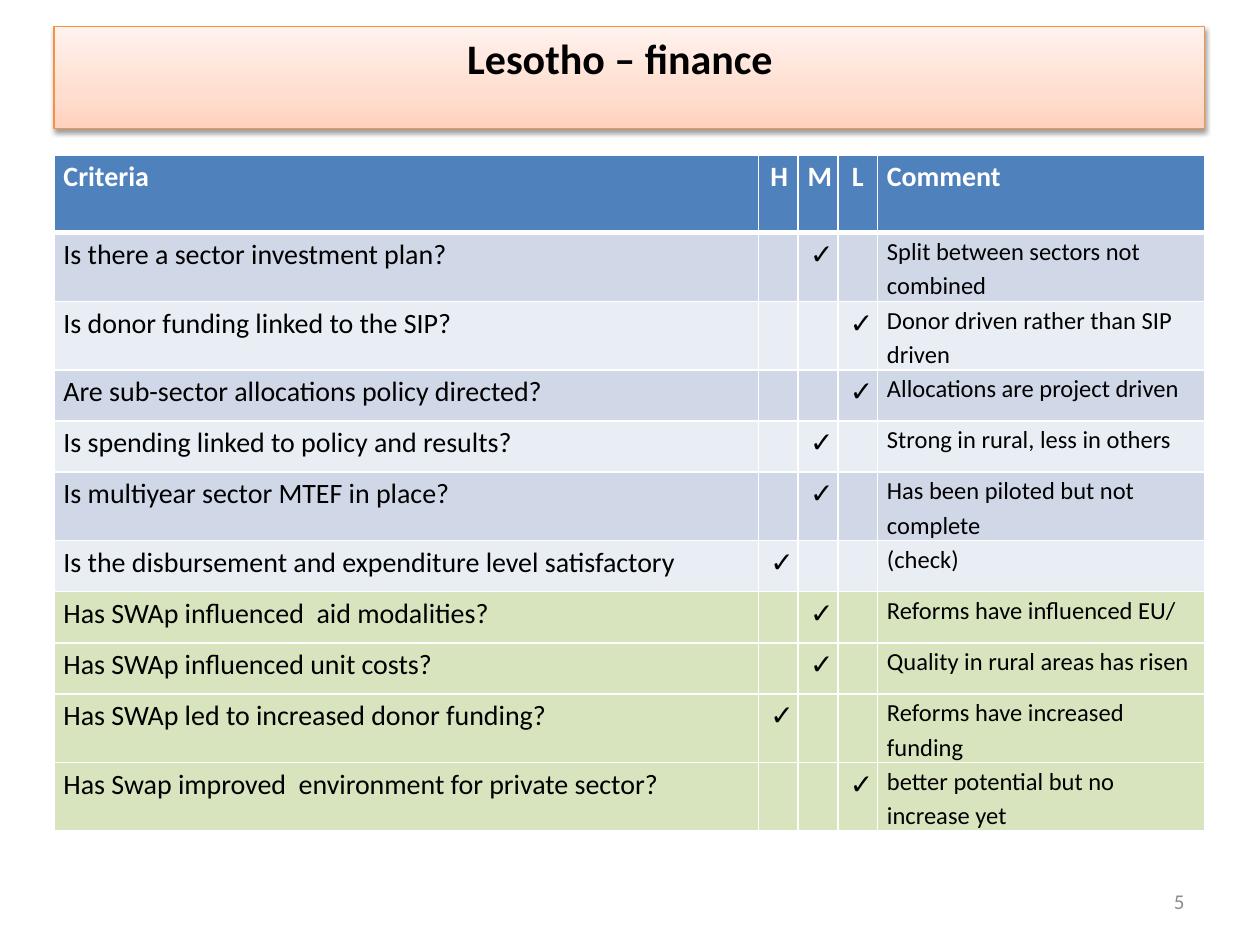
from lxml.etree import SubElement
from pptx import Presentation
from pptx.dml.color import RGBColor
from pptx.enum.shapes import MSO_SHAPE
from pptx.enum.text import MSO_ANCHOR, PP_ALIGN
from pptx.oxml import parse_xml
from pptx.oxml.ns import nsdecls, qn
from pptx.util import Cm, Pt

TITLE = "Lesotho – finance  "
PAGE = "5"
HEADER = ["Criteria", "H", "M", "L", "Comment"]
# criterion, rating, comment
CRITERIA = [
    ("Is there a sector investment plan?", "M", "Split between sectors not combined"),
    ("Is donor funding linked to the SIP?", "L", "Donor driven rather than SIP driven"),
    ("Are sub-sector allocations policy directed?", "L", "Allocations are project driven"),
    ("Is spending linked to policy and results?", "M", "Strong in rural, less in others"),
    ("Is multiyear sector MTEF in place?", "M", "Has been piloted but not complete"),
    ("Is the disbursement and expenditure level satisfactory", "H", "(check)"),
    ("Has SWAp influenced  aid modalities?", "M", "Reforms have influenced EU/"),
    ("Has SWAp influenced unit costs?", "M", "Quality in rural areas has risen"),
    ("Has SWAp led to increased donor funding?", "H", "Reforms have increased funding"),
    ("Has Swap improved  environment for private sector?", "L", "better potential but no increase yet"),
]
SECTOR_ROWS = 6  # the rows after these are about SWAp influence
COLORS = {
    "header": "4F81BD", "odd": "D0D8E8", "even": "E9EDF4", "swap": "D7E4BD",
    "white": "FFFFFF", "black": "000000", "grey": "8C8C8C", "title_line": "F69240",
}
TITLE_STOPS = [(0, "FFD2BD"), (35, "FFDED0"), (100, "FFF2ED")]
LEFT, WIDTH = 1.09, 23.2
COLS = [14.2, 0.8, 0.8, 0.8, 6.6]
HEADER_H, ONE_LINE, TWO_LINES = 1.57, 1.03, 1.38
ONE_LINE_CHARS = 32
# left margin and first-line indent of each column
INDENTS = [(0.97, -0.97), (0.05, 0), (0.05, 0), (0.05, 0), (0, 0)]


def rgb(name):
    return RGBColor.from_string(COLORS[name])


def add_run(p, text, size, color="black", bold=False):
    r = p.add_run()
    r.text = text
    r.font.name, r.font.size, r.font.bold = "Calibri", Pt(size), bold
    r.font.color.rgb = rgb(color)


def add_borders(cell, bottom):
    tcPr = cell._tc.get_or_add_tcPr()
    for side, width in (("L", 1), ("R", 1), ("T", 1), ("B", bottom)):
        ln = SubElement(tcPr, qn(f"a:ln{side}"), w=str(Pt(width)))
        fill = SubElement(ln, qn("a:solidFill"))
        SubElement(fill, qn("a:srgbClr"), val=COLORS["white"])


def fill_cell(cell, text, col, size, fill, color="black", bold=False, bottom=1):
    add_borders(cell, bottom)
    cell.fill.solid()
    cell.fill.fore_color.rgb = rgb(fill)
    cell.margin_left = cell.margin_right = Cm(0.19)
    cell.margin_top = cell.margin_bottom = 0
    if not text:
        return
    p = cell.text_frame.paragraphs[0]
    p.line_spacing = 1.15
    if bold and col in (2, 3):
        p.alignment = PP_ALIGN.CENTER
    else:
        margin, indent = INDENTS[col]
        pPr = p._p.get_or_add_pPr()
        pPr.set("marL", str(Cm(margin)))
        pPr.set("indent", str(Cm(indent)))
    add_run(p, text, size, color, bold)


prs = Presentation()
prs.slide_width, prs.slide_height = Cm(25.4), Cm(19.05)
s = prs.slides.add_slide(prs.slide_layouts[6])

# Criteria table
heights = [HEADER_H] + [
    TWO_LINES if len(comment) > ONE_LINE_CHARS or comment.endswith("funding") else ONE_LINE
    for _, _, comment in CRITERIA
]
table = s.shapes.add_table(len(heights), len(COLS), Cm(LEFT), Cm(3.12),
                           Cm(WIDTH), Cm(sum(heights))).table
for column, width in zip(table.columns, COLS):
    column.width = Cm(width)
for row, height in zip(table.rows, heights):
    row.height = Cm(height)

for col, text in enumerate(HEADER):
    fill_cell(table.cell(0, col), text, col, 16, "header", "white", True, 3)
for i, (question, rating, comment) in enumerate(CRITERIA):
    fill = "swap" if i >= SECTOR_ROWS else ("odd", "even")[i % 2]
    marks = ["✓" if level == rating else "" for level in HEADER[1:4]]
    for col, text in enumerate([question, *marks, comment]):
        fill_cell(table.cell(i + 1, col), text, col, 14 if col == 4 else 16, fill)

# Title bar with gradient and soft shadow
bar = s.shapes.add_shape(MSO_SHAPE.RECTANGLE, Cm(LEFT), Cm(0.53), Cm(WIDTH), Cm(2.06))
bar.line.color.rgb = rgb("title_line")
bar.line.width = Pt(0.75)
stops = "".join(f'<a:gs pos="{pos * 1000}"><a:srgbClr val="{color}"/></a:gs>'
                for pos, color in TITLE_STOPS)
bar._element.spPr.find(qn("a:prstGeom")).addnext(parse_xml(
    f'<a:gradFill {nsdecls("a")} rotWithShape="1"><a:gsLst>{stops}</a:gsLst>'
    '<a:lin ang="16200000" scaled="0"/></a:gradFill>'))
bar._element.spPr.append(parse_xml(
    f'<a:effectLst {nsdecls("a")}><a:outerShdw blurRad="{Pt(3.1)}" dist="{Pt(1.6)}" '
    f'dir="5400000" rotWithShape="0"><a:srgbClr val="{COLORS["black"]}">'
    '<a:alpha val="38000"/></a:srgbClr></a:outerShdw></a:effectLst>'))
tf = bar.text_frame
tf.word_wrap = True
tf.vertical_anchor = MSO_ANCHOR.TOP
p = tf.paragraphs[0]
p.alignment = PP_ALIGN.CENTER
add_run(p, TITLE, 24, bold=True)

# Page number
tf = s.shapes.add_textbox(Cm(18.2), Cm(17.66), Cm(5.93), Cm(1.01)).text_frame
tf.word_wrap = True
tf.vertical_anchor = MSO_ANCHOR.MIDDLE
p = tf.paragraphs[0]
p.alignment = PP_ALIGN.RIGHT
add_run(p, PAGE, 12, "grey")

prs.save("out.pptx")
